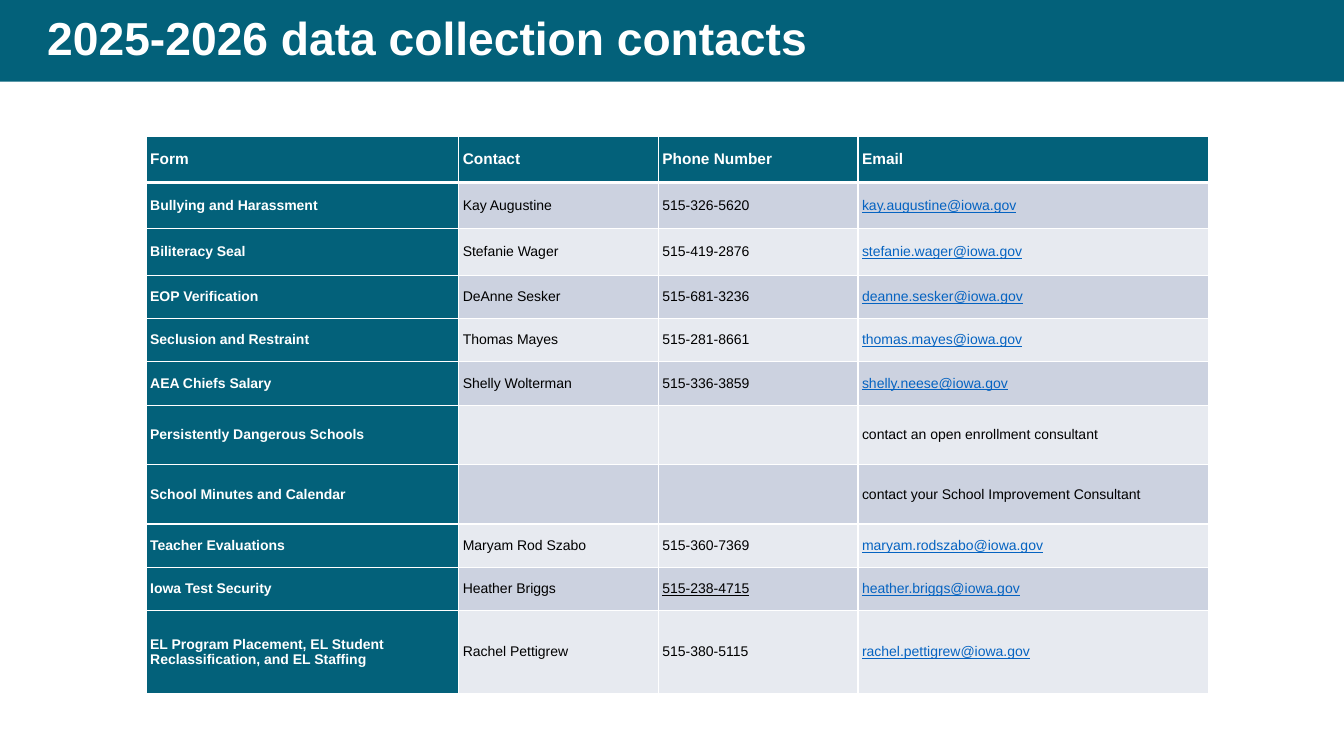
from lxml.etree import SubElement
from pptx import Presentation
from pptx.dml.color import RGBColor
from pptx.enum.shapes import MSO_SHAPE
from pptx.enum.text import MSO_ANCHOR
from pptx.oxml.ns import qn
from pptx.util import Inches, Pt

COLORS = {
    "teal": "03617A",
    "white": "FFFFFF",
    "black": "000000",
    "link": "0563C1",
    "band_dark": "CCD2E0",
    "band_light": "E7EAF0",
}
HEADINGS = ("Form", "Contact", "Phone Number", "Email")
CONTACTS = (
    ("Bullying and Harassment", "Kay Augustine", "515-326-5620", "kay.augustine@iowa.gov"),
    ("Biliteracy Seal", "Stefanie Wager", "515-419-2876", "stefanie.wager@iowa.gov"),
    ("EOP Verification", "DeAnne Sesker", "515-681-3236", "deanne.sesker@iowa.gov"),
    ("Seclusion and Restraint", "Thomas Mayes", "515-281-8661", "thomas.mayes@iowa.gov"),
    ("AEA Chiefs Salary", "Shelly Wolterman", "515-336-3859", "shelly.neese@iowa.gov"),
    ("Persistently Dangerous Schools", "", "", "contact an open enrollment consultant"),
    ("School Minutes and Calendar", "", "", "contact your School Improvement Consultant"),
    ("Teacher Evaluations", "Maryam Rod Szabo", "515-360-7369", "maryam.rodszabo@iowa.gov"),
    ("Iowa Test Security", "Heather Briggs", "515-238-4715", "heather.briggs@iowa.gov"),
    ("EL Program Placement, EL Student Reclassification, and EL Staffing",
     "Rachel Pettigrew", "515-380-5115", "rachel.pettigrew@iowa.gov"),
)
UNDERLINED_PHONE = "515-238-4715"
COLUMN_WIDTHS = (3.1, 1.98, 1.98, 3.48)
ROW_HEIGHTS = (0.46, 0.46, 0.46, 0.43, 0.43, 0.43, 0.59, 0.59, 0.43, 0.43, 0.82)


def rgb(name):
    """Return the named colour."""
    return RGBColor.from_string(COLORS[name])


def write(frame, text, size=10, color="black", bold=False, underline=False, spacing=1.0):
    """Write one formatted paragraph into a text frame."""
    frame.word_wrap = True
    paragraph = frame.paragraphs[0]
    paragraph.line_spacing = spacing
    run = paragraph.add_run()
    run.text = text
    run.font.name = "Arial"
    run.font.size = Pt(size)
    run.font.color.rgb = rgb(color)
    run.font.bold = bold
    run.font.underline = underline


def set_borders(cell, top=1, bottom=1):
    """Draw white borders round a cell, with widths in points."""
    properties = cell._tc.get_or_add_tcPr()
    widths = {"a:lnL": 1, "a:lnR": 1, "a:lnT": top, "a:lnB": bottom}
    for position, (side, width) in enumerate(widths.items()):
        border = SubElement(properties, qn(side), w=str(Pt(width)))
        fill = SubElement(border, qn("a:solidFill"))
        SubElement(fill, qn("a:srgbClr"), val=COLORS["white"])
        properties.insert(position, border)


def add_title_band(slide, left, top, width, height):
    """Add the teal band and the slide title on it."""
    band = slide.shapes.add_shape(MSO_SHAPE.RECTANGLE, left, top, width, height)
    band.shadow.inherit = False
    band.fill.solid()
    band.fill.fore_color.rgb = rgb("teal")
    band.line.fill.background()
    title = slide.shapes.add_textbox(left + Inches(0.37), top, Inches(12.32), height)
    title.text_frame.vertical_anchor = MSO_ANCHOR.MIDDLE
    write(title.text_frame, "2025-2026 data collection contacts",
          size=33, color="white", bold=True, spacing=0.9)


def fill_cell(cell, text, row, column):
    """Format a table cell by its row and column and write its text."""
    heading = row == 0 or column == 0
    band = "band_dark" if row % 2 else "band_light"
    cell.fill.solid()
    cell.fill.fore_color.rgb = rgb("teal" if heading else band)
    set_borders(cell, top=3 if row == 1 else 1, bottom=3 if row == 0 else 1)
    cell.vertical_anchor = MSO_ANCHOR.MIDDLE
    cell.margin_left = cell.margin_right = Inches(0.04)
    cell.margin_top = cell.margin_bottom = Inches(0.04)
    if text:
        email = "@" in text
        color = "white" if heading else "link" if email else "black"
        write(cell.text_frame, text, size=11 if row == 0 else 10, color=color,
              bold=heading, underline=email or text == UNDERLINED_PHONE)


def add_contact_table(slide, left, top, width, height):
    """Add the table of contacts for each form."""
    records = (HEADINGS, *CONTACTS)
    table = slide.shapes.add_table(
        len(records), len(HEADINGS), left, top, width, height).table
    for column, column_width in zip(table.columns, COLUMN_WIDTHS):
        column.width = Inches(column_width)
    for row, row_height in zip(table.rows, ROW_HEIGHTS):
        row.height = Inches(row_height)
    for row, record in enumerate(records):
        for column, text in enumerate(record):
            fill_cell(table.cell(row, column), text, row, column)


def main():
    """Build and save the contacts slide."""
    deck = Presentation()
    deck.slide_width, deck.slide_height = Inches(13.33), Inches(7.5)
    slide = deck.slides.add_slide(deck.slide_layouts[6])
    add_title_band(slide, 0, 0, deck.slide_width, Inches(0.81))
    add_contact_table(slide, Inches(1.45), Inches(1.35), Inches(10.53), Inches(5.52))
    deck.save("out.pptx")


if __name__ == "__main__":
    main()
